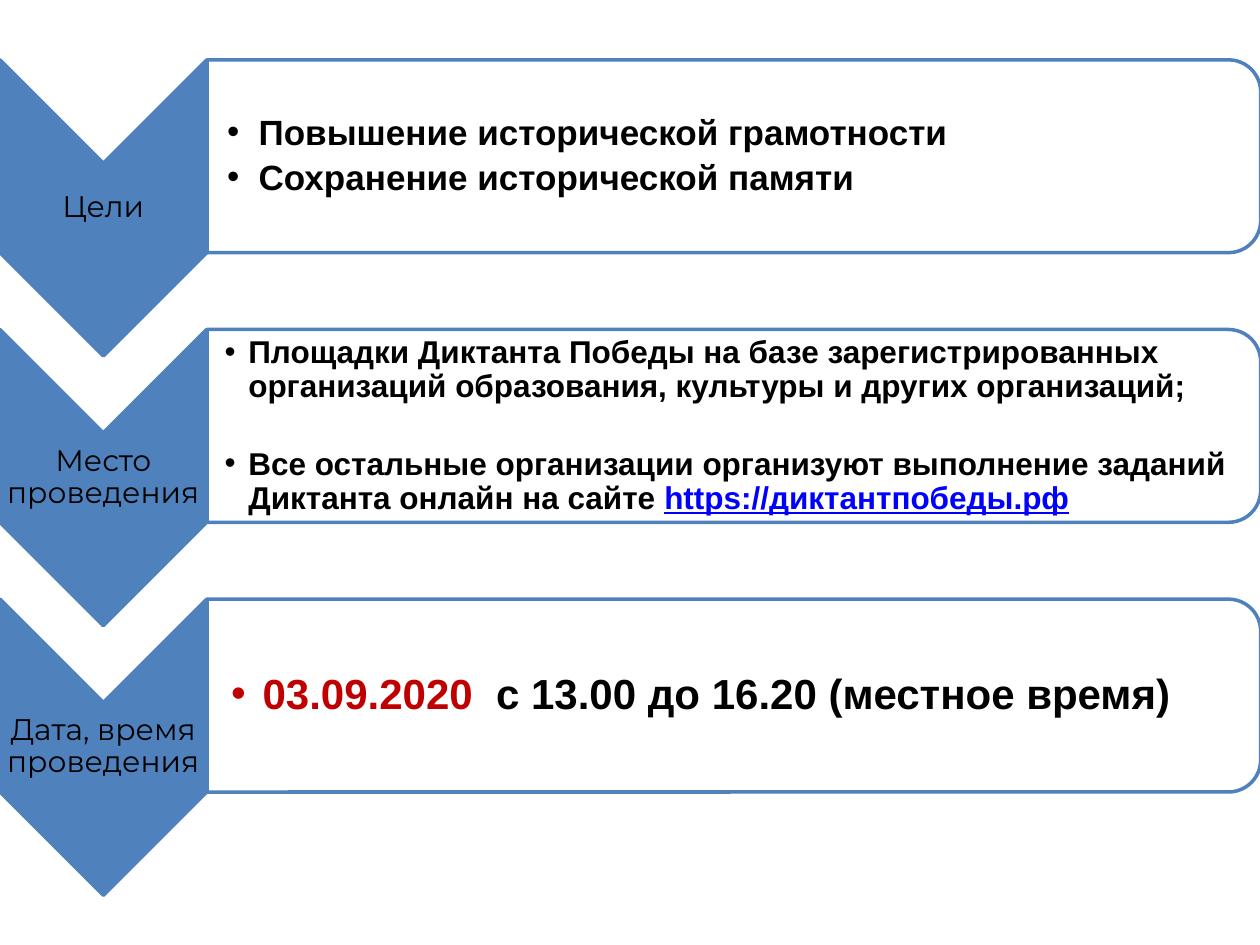
from lxml.etree import SubElement
from pptx import Presentation
from pptx.dml.color import RGBColor
from pptx.enum.shapes import MSO_SHAPE as Preset
from pptx.enum.text import MSO_ANCHOR as Anchor, PP_ALIGN as Align
from pptx.oxml.ns import qn
from pptx.util import Pt

BLUE, BLACK, RED, LINK = "4F81BD", "000000", "C00000", "0000FF"
ROW_TOP, ROW_PITCH = 34.2, 154.1
STAGE_WIDTH, STAGE_HEIGHT = 118.1, 169.2
PANEL_LEFT, PANEL_WIDTH, PANEL_HEIGHT = 118.4, 602, 110.2


def color(hex_value):
    return RGBColor.from_string(hex_value)


class Deck:
    label_font, body_font = "Montserrat", "Arial"

    def __init__(self, width, height):
        self.presentation = Presentation()
        self.presentation.slide_width = Pt(width)
        self.presentation.slide_height = Pt(height)
        self.slide = self.presentation.slides.add_slide(self.presentation.slide_layouts[6])

    def turned(self, preset, left, top, width, height, fill, opacity=100):
        middle_x, middle_y = left + width / 2, top + height / 2
        shape = self.slide.shapes.add_shape(
            preset, Pt(middle_x - height / 2), Pt(middle_y - width / 2), Pt(height), Pt(width))
        shape.rotation = 90
        shape.shadow.inherit = False
        shape.fill.solid()
        shape.fill.fore_color.rgb = color(fill)
        shape.line.color.rgb = color(BLUE)
        shape.line.width = Pt(2)
        if opacity < 100:
            solid = shape.fill._xPr.find(qn("a:solidFill"))
            SubElement(solid[0], qn("a:alpha"), val=str(opacity * 1000))

    def frame(self, left, top, width, height, inset=0.7):
        frame = self.slide.shapes.add_textbox(Pt(left), Pt(top), Pt(width), Pt(height)).text_frame
        frame.word_wrap = True
        frame.vertical_anchor = Anchor.MIDDLE
        frame.margin_left = Pt(inset)
        frame.margin_top = frame.margin_right = frame.margin_bottom = Pt(0.7)
        return frame

    def style(self, run, font, size, ink, bold=False):
        run.font.name = font
        run.font.size = Pt(size)
        run.font.color.rgb = color(ink)
        run.font.bold = bold
        run.font.underline = ink == LINK

    def label(self, text, left, top, width, height):
        frame = self.frame(left, top, width, height)
        frame.text = text
        caption = frame.paragraphs[0]
        caption.alignment = Align.CENTER
        caption.line_spacing = 0.9
        self.style(caption.runs[0], self.label_font, 17, BLACK)

    def bullets(self, items, left, top, width, height, size, inset, indent, gap):
        frame = self.frame(left, top, width, height, inset)
        frame.text = "\n".join("" for _ in items)
        for index, (item, parts) in enumerate(zip(frame.paragraphs, items)):
            item.line_spacing = 0.9
            item.space_after = Pt(gap if index < len(items) - 1 else 0)
            properties = item._p.get_or_add_pPr()
            properties.set("marL", str(Pt(indent)))
            properties.set("indent", str(-Pt(indent)))
            SubElement(properties, qn("a:buFont"), typeface=self.body_font)
            SubElement(properties, qn("a:buChar"), char="•")
            for text, ink in parts:
                run = item.add_run()
                run.text = text
                self.style(run, self.body_font, size, ink, bold=True)


def main():
    goals = [[("Повышение исторической грамотности", BLACK)],
             [("Сохранение исторической памяти", BLACK)]]
    venues = [[("Площадки Диктанта Победы на базе зарегистрированных организаций "
                "образования, культуры и других организаций;", BLACK)],
              [("Все остальные организации организуют выполнение заданий "
                "Диктанта онлайн на сайте ", BLACK),
               ("https://диктантпобеды.рф", LINK)]]
    schedule = [[("03.09.2020", RED), ("  с 13.00 до 16.20 (местное время)", BLACK)]]
    rows = [("Цели", goals, 20, 11.4, 18, 4),
            ("Место проведения", venues, 18, 10, 13.5, 25),
            ("Дата, время проведения", schedule, 24, 13.7, 18, 4)]

    deck = Deck(720, 540)
    for index, (stage, items, size, inset, indent, gap) in enumerate(rows):
        top = ROW_TOP + index * ROW_PITCH
        deck.turned(Preset.CHEVRON, 0, top, STAGE_WIDTH, STAGE_HEIGHT, BLUE)
        deck.label(stage, 0, top + 59.4, STAGE_WIDTH, 50.4)
        deck.turned(Preset.ROUND_2_SAME_RECTANGLE, PANEL_LEFT, top,
                    PANEL_WIDTH, PANEL_HEIGHT, "FFFFFF", opacity=90)
        deck.bullets(items, PANEL_LEFT, top + 5.4, 596.2, 99.4, size, inset, indent, gap)
    deck.presentation.save("out.pptx")


if __name__ == "__main__":
    main()
